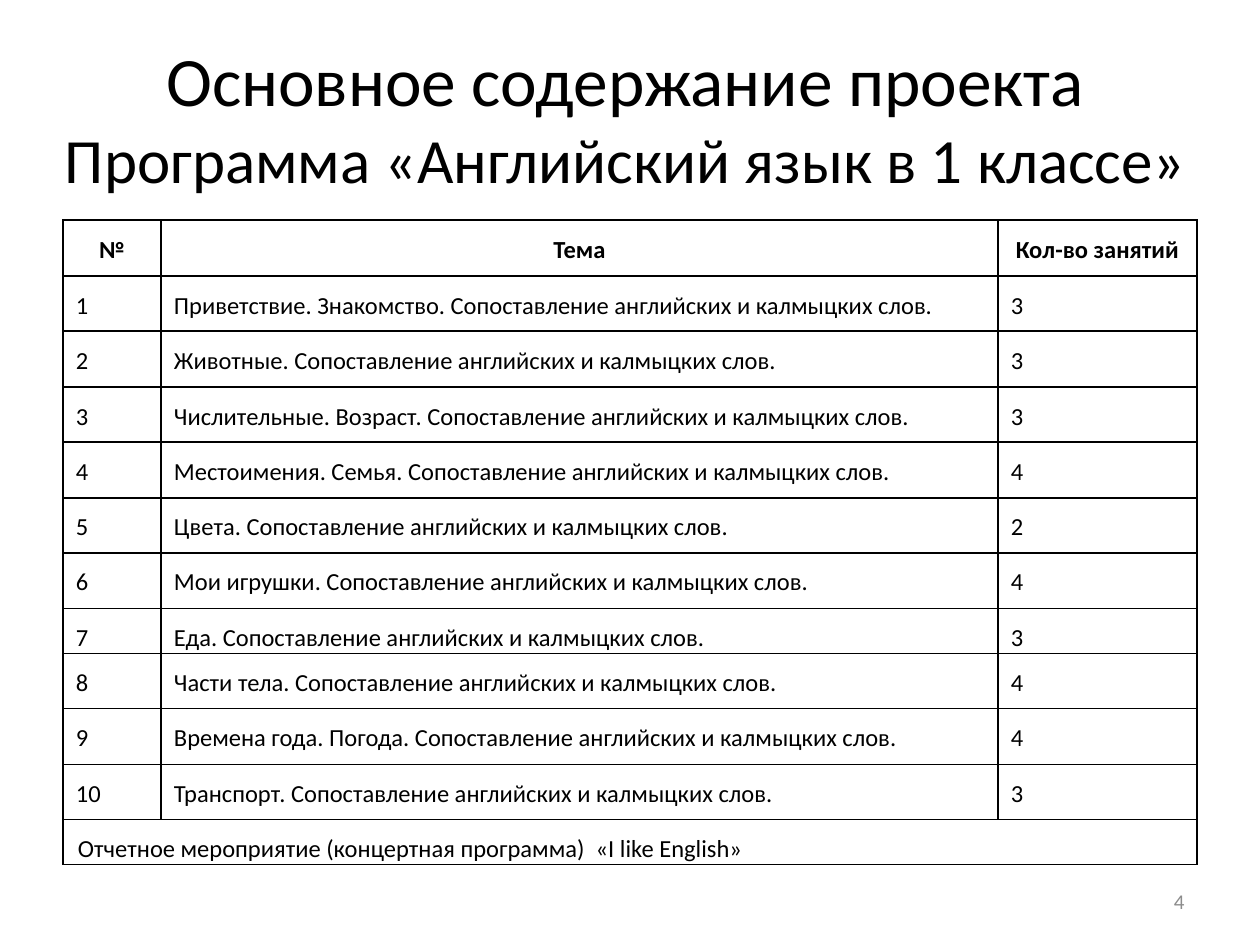
"""Build the slide with the lesson plan of the first-grade English programme."""
import pptx
import pptx.util
import pptx.dml.color
import pptx.enum.text
import pptx.oxml
import pptx.oxml.ns

ALIGN = pptx.enum.text.PP_ALIGN
MIDDLE = pptx.enum.text.MSO_ANCHOR.MIDDLE
NO_FIT = pptx.enum.text.MSO_AUTO_SIZE.NONE

HEADING = ["Основное содержание проекта", "Программа «Английский язык в 1 классе»"]
HEADER = ["№", "Тема", "Кол-во занятий"]
COMPARISON = "Сопоставление английских и калмыцких слов."
TOPICS = [
    ("Приветствие. Знакомство.", 3),
    ("Животные.", 3),
    ("Числительные. Возраст.", 3),
    ("Местоимения. Семья.", 4),
    ("Цвета.", 2),
    ("Мои игрушки.", 4),
    ("Еда.", 3),
    ("Части тела.", 4),
    ("Времена года. Погода.", 4),
    ("Транспорт.", 3),
]
FINAL_EVENT = "Отчетное мероприятие (концертная программа)  «I like English»"
PAGE = "4"

THEME = {
    "font": "Calibri",
    "ink": "000000",
    "muted": "8C8C8C",
    "heading": [39.6, 36],
    "body": 14,
    "page": 12,
    "border": 1,
}
PX = 914400 // 126
SLIDE = (1260, 945)
HEADING_BOX = (15, 38, 1221, 157)
PAGE_BOX = (903, 876, 294, 50)
TABLE_LEFT, TABLE_TOP = 63, 220
COLUMNS = [98, 837, 199]
ROWS = [56, 55, 56, 55, 56, 55, 56, 45, 55, 56, 55, 45]
CELL_INSET = 13
EVENT_INDENT = 2


def px(*lengths):
    return [pptx.util.Emu(length * PX) for length in lengths]


def apply(target, values):
    for name, value in values.items():
        setattr(target, name, value)


def write(paragraph, words, size, color=THEME["ink"], bold=False):
    run = paragraph.add_run()
    run.text = words
    apply(run.font, {"name": THEME["font"], "size": pptx.util.Pt(size), "bold": bold})
    run.font.color.rgb = pptx.dml.color.RGBColor.from_string(color)


def outline(cell):
    properties = cell._tc.get_or_add_tcPr()
    width = pptx.util.Pt(THEME["border"])
    for side in ("lnL", "lnR", "lnT", "lnB"):
        properties.append(pptx.oxml.parse_xml(
            f'<a:{side} {pptx.oxml.ns.nsdecls("a")} w="{width}"><a:solidFill>'
            f'<a:srgbClr val="{THEME["ink"]}"/></a:solidFill></a:{side}>'))


def add_heading(slide):
    heading = slide.shapes.title
    apply(heading, dict(zip(("left", "top", "width", "height"), px(*HEADING_BOX))))
    apply(heading.text_frame, {
        "word_wrap": True, "auto_size": NO_FIT, "vertical_anchor": MIDDLE})
    paragraph = heading.text_frame.paragraphs[0]
    paragraph.alignment = ALIGN.CENTER
    for index, (line, size) in enumerate(zip(HEADING, THEME["heading"])):
        if index:
            paragraph.add_line_break()
        write(paragraph, line, size)


def add_plan(slide):
    lessons = [(str(number), f"{topic} {COMPARISON}", str(count))
               for number, (topic, count) in enumerate(TOPICS, 1)]
    content = [HEADER, *lessons, (FINAL_EVENT, "", "")]
    plan = slide.shapes.add_table(
        len(ROWS), len(COLUMNS),
        *px(TABLE_LEFT, TABLE_TOP, sum(COLUMNS), sum(ROWS))).table
    apply(plan, {"first_row": False, "horz_banding": False})
    for column, width in zip(plan.columns, px(*COLUMNS)):
        column.width = width
    for row, height in zip(plan.rows, px(*ROWS)):
        row.height = height
    inset, indent = px(CELL_INSET, EVENT_INDENT)
    for row_index, entries in enumerate(content):
        is_header = row_index == 0
        for column_index, words in enumerate(entries):
            cell = plan.cell(row_index, column_index)
            outline(cell)
            cell.fill.background()
            apply(cell, {"margin_left": inset, "margin_right": inset,
                         "margin_top": 0, "margin_bottom": 0})
            paragraph = cell.text_frame.paragraphs[0]
            apply(paragraph, {
                "alignment": ALIGN.CENTER if is_header else ALIGN.JUSTIFY,
                "line_spacing": 1.5})
            if words:
                write(paragraph, words, THEME["body"], bold=is_header)
    event = plan.cell(len(ROWS) - 1, 0)
    event.merge(plan.cell(len(ROWS) - 1, len(COLUMNS) - 1))
    event.margin_left = inset + indent


def add_page_number(slide):
    frame = slide.shapes.add_textbox(*px(*PAGE_BOX)).text_frame
    apply(frame, {"word_wrap": True, "vertical_anchor": MIDDLE})
    frame.paragraphs[0].alignment = ALIGN.RIGHT
    write(frame.paragraphs[0], PAGE, THEME["page"], THEME["muted"])


def main():
    deck = pptx.Presentation()
    apply(deck, dict(zip(("slide_width", "slide_height"), px(*SLIDE))))
    slide = deck.slides.add_slide(deck.slide_layouts[5])
    add_heading(slide)
    add_plan(slide)
    add_page_number(slide)
    deck.save("out.pptx")


if __name__ == "__main__":
    main()
